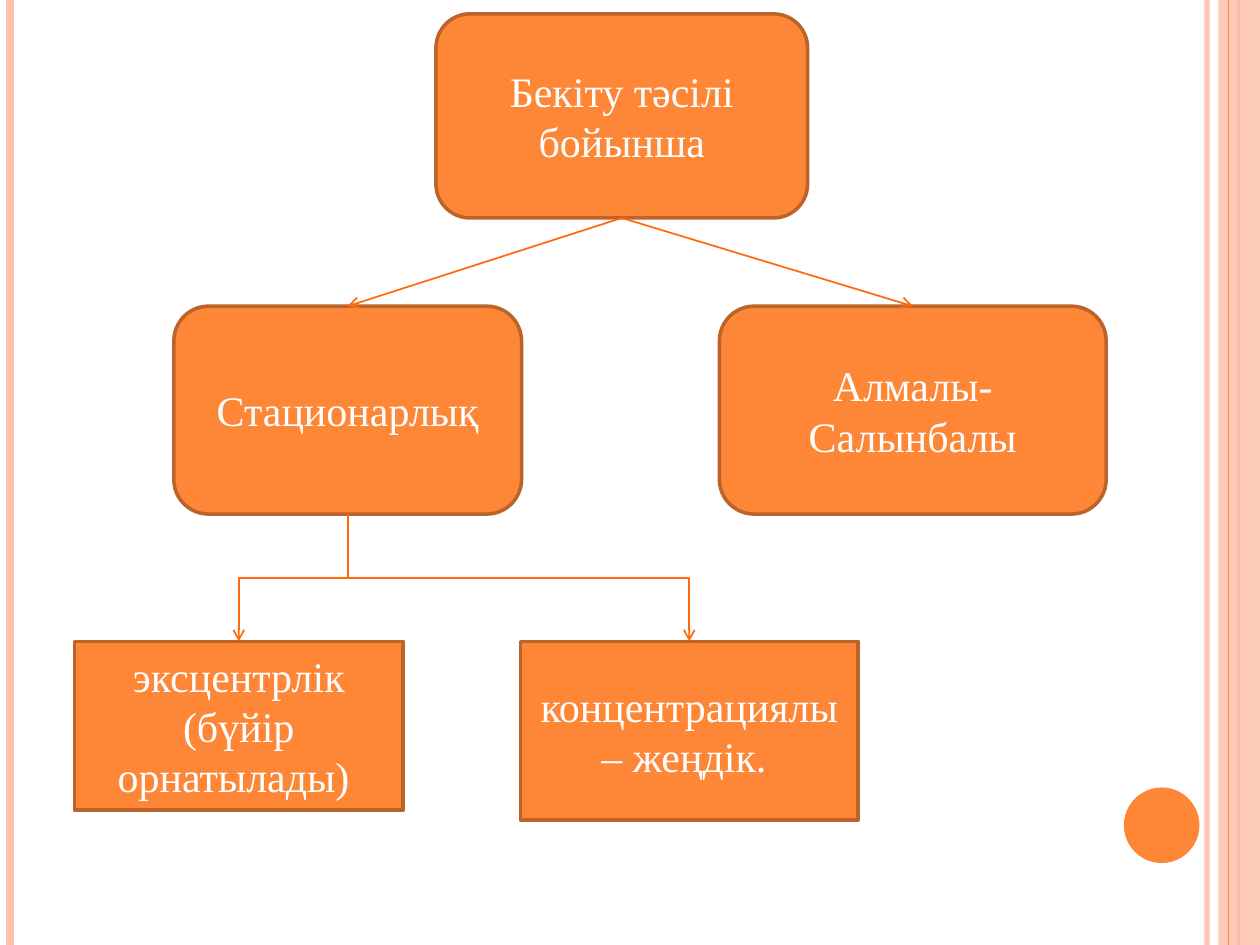
from lxml.etree import SubElement
from pptx import Presentation
from pptx.dml.color import RGBColor
from pptx.enum.shapes import MSO_CONNECTOR, MSO_SHAPE
from pptx.enum.text import MSO_ANCHOR, PP_ALIGN
from pptx.oxml.ns import qn
from pptx.util import Inches, Pt

ORANGE = RGBColor(0xFE, 0x86, 0x37)
BROWN = RGBColor(0xBC, 0x63, 0x29)
PINK = RGBColor(0xFE, 0xC3, 0xAE)
ARROW = RGBColor(0xFF, 0x6B, 0x0A)
WHITE = RGBColor(0xFF, 0xFF, 0xFF)

TOP, BOTTOM = 0, 2
PAGE_WIDTH, PAGE_HEIGHT = 10, 7.5

# name: (preset shape, box, text)
NODES = {
    "method": (MSO_SHAPE.ROUNDED_RECTANGLE, (3.46, 0.11, 2.95, 1.62),
               "Бекіту тәсілі бойынша"),
    "stationary": (MSO_SHAPE.ROUNDED_RECTANGLE, (1.38, 2.43, 2.76, 1.65),
                   "Стационарлық"),
    "removable": (MSO_SHAPE.ROUNDED_RECTANGLE, (5.71, 2.43, 3.07, 1.65),
                  "Алмалы-Салынбалы"),
    "eccentric": (MSO_SHAPE.RECTANGLE, (0.59, 5.09, 2.61, 1.34),
                  "эксцентрлік (бүйір орнатылады) "),
    "concentric": (MSO_SHAPE.RECTANGLE, (4.13, 5.09, 2.68, 1.42),
                   "концентрациялы – жеңдік. "),
}
STRAIGHT_LINKS = [("method", "stationary"), ("method", "removable")]
ELBOW_LINKS = [("stationary", "eccentric"), ("stationary", "concentric")]

# x, colour, width in points, opacity in percent
STRIPES = [(9.58, PINK, 3, 93), (0.08, PINK, 4.5, 100),
           (9.83, ORANGE, 1.5, 100), (9.75, ORANGE, 0.75, 100)]


def set_opacity(fill, percent):
    color = fill._xPr.find(qn("a:solidFill"))[0]
    SubElement(color, qn("a:alpha"), val=str(percent * 1000))


def add_block(page, preset, box, color, opacity=100):
    block = page.shapes.add_shape(preset, *map(Inches, box))
    block.shadow.inherit = False
    block.fill.solid()
    block.fill.fore_color.rgb = color
    block.line.fill.background()
    if opacity < 100:
        set_opacity(block.fill, opacity)
    return block


def add_line(page, kind, ends, color, width):
    line = page.shapes.add_connector(kind, *ends)
    line.line.color.rgb = color
    line.line.width = Pt(width)
    SubElement(line._element.spPr, qn("a:effectLst"))
    return line


def add_decor(page, width, height):
    def add_stripe(x, color, weight, opacity):
        ends = (Inches(x), 0, Inches(x), Inches(height))
        stripe = add_line(page, MSO_CONNECTOR.STRAIGHT, ends, color, weight)
        if opacity < 100:
            set_opacity(stripe.line.fill, opacity)

    for stripe in STRIPES[:-1]:
        add_stripe(*stripe)
    add_block(page, MSO_SHAPE.RECTANGLE, (width - 0.33, 0, 0.33, height), PINK, 87)
    add_stripe(*STRIPES[-1])
    add_block(page, MSO_SHAPE.OVAL, (8.92, 6.25, 0.6, 0.6), ORANGE)


def add_node(page, preset, box, text):
    node = add_block(page, preset, box, ORANGE)
    node.line.color.rgb = BROWN
    node.line.width = Pt(2)
    frame = node.text_frame
    frame.word_wrap = True
    frame.vertical_anchor = MSO_ANCHOR.MIDDLE
    para = frame.paragraphs[0]
    para.alignment = PP_ALIGN.CENTER
    span = para.add_run()
    span.text = text
    for name, value in {"name": "Times New Roman", "size": Pt(24)}.items():
        setattr(span.font, name, value)
    span.font.color.rgb = WHITE


def add_link(page, kind, parent, child):
    """Draw an arrow from the parent's bottom middle to the child's top middle."""
    link = add_line(page, kind, (0, 0, 0, 0), ARROW, 1)
    link.begin_connect(parent, BOTTOM)
    link.end_connect(child, TOP)
    SubElement(link.line._get_or_add_ln(), qn("a:tailEnd"), type="arrow")
    return link


def turn_downward(link):
    """Rotate an elbow so that it leaves and arrives vertically."""
    run, drop = link.end_x - link.begin_x, link.end_y - link.begin_y
    middle_x = (link.begin_x + link.end_x) // 2
    middle_y = (link.begin_y + link.end_y) // 2
    link.width, link.height = drop, abs(run)
    link.left, link.top = middle_x - drop // 2, middle_y - abs(run) // 2
    frame = link._element.spPr.find(qn("a:xfrm"))
    frame.set("rot", str((270 if run > 0 else 90) * 60000))
    frame.set("flipH", "1" if run > 0 else "0")


def add_tree(page):
    nodes = {}
    for name, (preset, box, text) in NODES.items():
        add_node(page, preset, box, text)
        nodes[name] = page.shapes[-1]
    for parent, child in ELBOW_LINKS:
        turn_downward(add_link(page, MSO_CONNECTOR.ELBOW, nodes[parent], nodes[child]))
    for parent, child in STRAIGHT_LINKS:
        add_link(page, MSO_CONNECTOR.STRAIGHT, nodes[parent], nodes[child])


def main():
    deck = Presentation()
    deck.slide_width, deck.slide_height = Inches(PAGE_WIDTH), Inches(PAGE_HEIGHT)
    page = deck.slides.add_slide(deck.slide_layouts[6])
    add_decor(page, PAGE_WIDTH, PAGE_HEIGHT)
    add_tree(page)
    deck.save("out.pptx")


if __name__ == "__main__":
    main()
